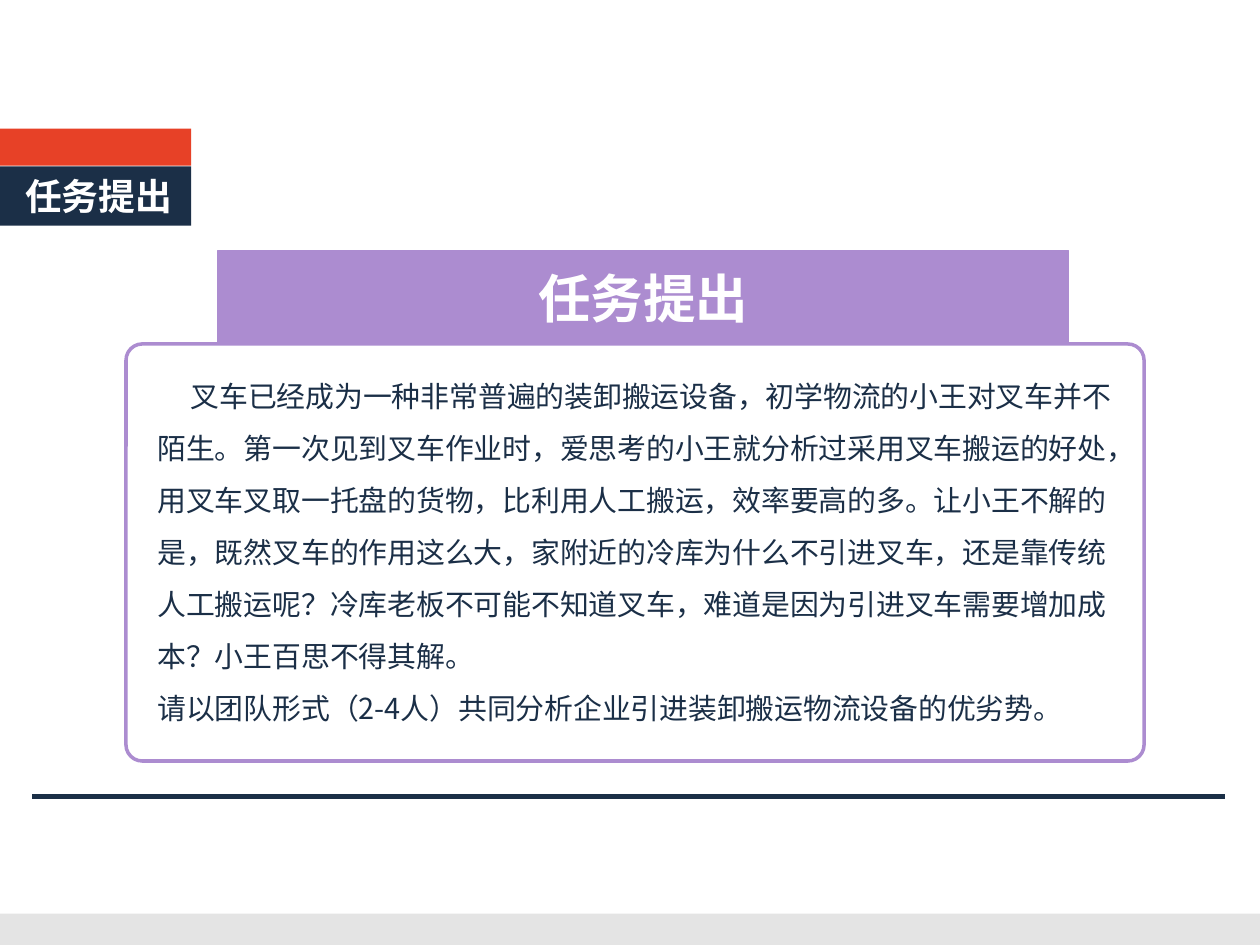
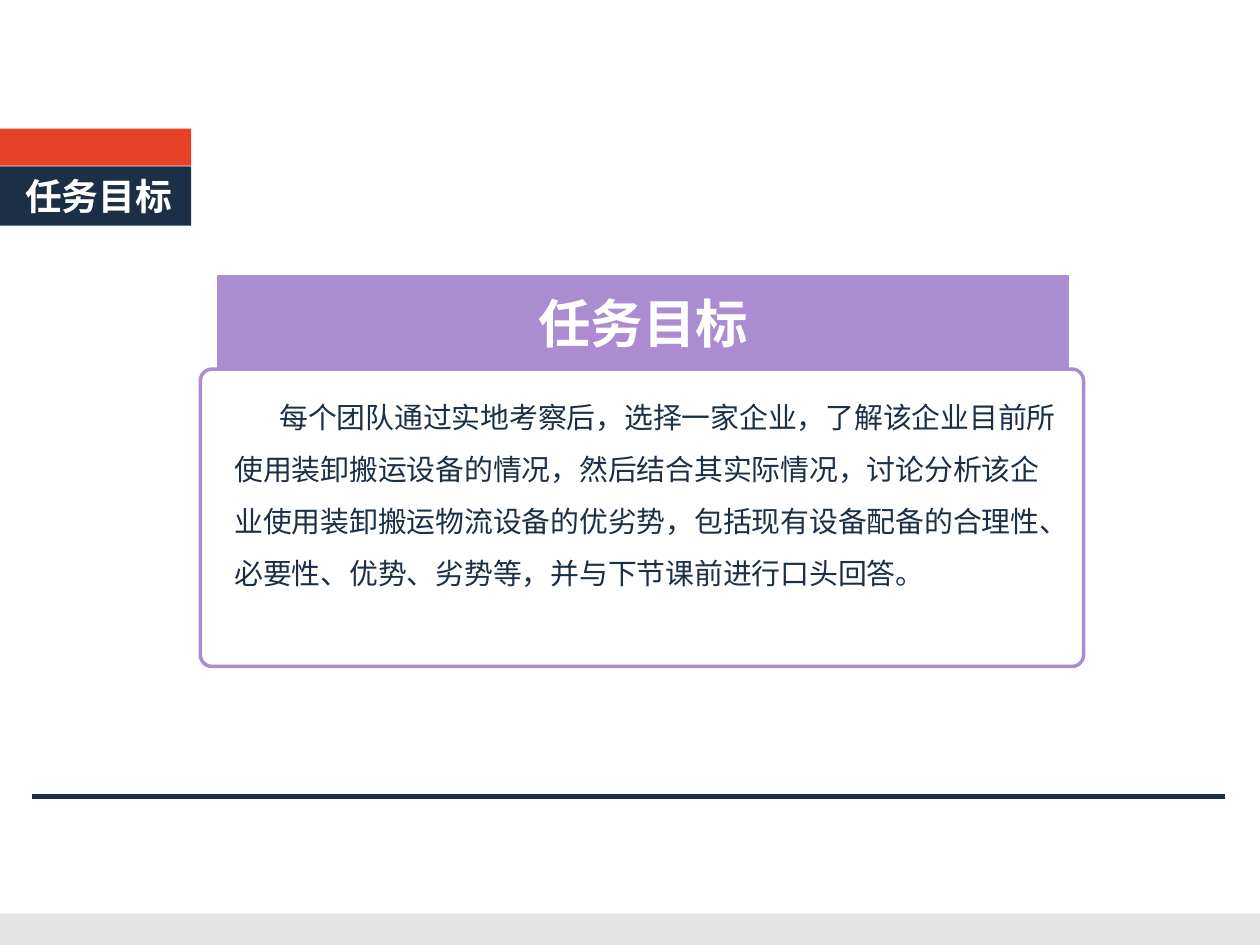
import pptx
import pptx.util
import pptx.dml.color
import pptx.enum.shapes
import pptx.enum.text
import pptx.oxml.ns
from lxml import etree

Pt = pptx.util.Pt
Shape = pptx.enum.shapes.MSO_SHAPE
Align = pptx.enum.text.PP_ALIGN
Anchor = pptx.enum.text.MSO_ANCHOR

SLIDES = [
    {
        "title": "任务提出",
        "panel": (72, 196.56, 581.76, 238.32),
        "body": (82.8, 202.9, 566.64, 225),
        "paragraphs": [
            ("叉车已经成为一种非常普遍的装卸搬运设备，初学物流的小王对叉车并不陌生。"
             "第一次见到叉车作业时，爱思考的小王就分析过采用叉车搬运的好处，"
             "用叉车叉取一托盘的货物，比利用人工搬运，效率要高的多。"
             "让小王不解的是，既然叉车的作用这么大，家附近的冷库为什么不引进叉车，"
             "还是靠传统人工搬运呢？冷库老板不可能不知道叉车，"
             "难道是因为引进叉车需要增加成本？小王百思不得其解。", 19),
            ("请以团队形式（2-4人）共同分析企业引进装卸搬运物流设备的优劣势。", 0),
        ],
    },
    {
        "title": "任务目标",
        "panel": (114.48, 210.96, 504.72, 169.92),
        "body": (126.72, 214.9, 488.16, 127.44),
        "paragraphs": [
            ("每个团队通过实地考察后，选择一家企业，了解该企业目前所使用装卸搬运设备的情况，"
             "然后结合其实际情况，讨论分析该企业使用装卸搬运物流设备的优劣势，"
             "包括现有设备配备的合理性、必要性、优势、劣势等，并与下节课前进行口头回答。", 25.7),
        ],
    },
]

COLORS = {"navy": "1B2F47", "red": "E74127", "purple": "AC8CD0",
          "white": "FFFFFF", "gray": "E4E4E4"}
FONT = "Noto Sans CJK SC"
TEXT_STYLES = {
    "tag": {"size": Pt(21), "bold": True, "color": "white"},
    "banner": {"size": Pt(30), "bold": True, "color": "white"},
    "body": {"size": Pt(16.5), "bold": False, "color": "navy"},
}
PARAGRAPH_FORMATS = {
    "tag": {"alignment": Align.LEFT},
    "banner": {"alignment": Align.CENTER},
    "body": {"alignment": Align.LEFT, "line_spacing": Pt(29.7),
             "space_before": Pt(0), "space_after": Pt(0)},
}
FRAME_FORMAT = {"word_wrap": True, "auto_size": pptx.enum.text.MSO_AUTO_SIZE.NONE,
                "margin_left": Pt(7.2), "margin_right": Pt(7.2),
                "margin_top": Pt(3.6), "margin_bottom": Pt(3.6)}

SLIDE_WIDTH, SLIDE_HEIGHT = 720, 540
FOOTER_HEIGHT = 18
TAG_WIDTH = 109.2
TAG_TITLE_BOX = (7.2, 95.8, 101.52, 32.4)
BANNER_LEFT, BANNER_WIDTH, BANNER_HEIGHT = 124.56, 486, 53.28
RULE_LEFT, RULE_RIGHT, RULE_TOP = 18, 700, 455.04


def rgb(name):
    return pptx.dml.color.RGBColor.from_string(COLORS[name])


def apply_format(target, values):
    for name, value in values.items():
        setattr(target, name, value)


def add_block(slide, kind, box, fill, line=None, line_width=0, rounding=None):
    shape = slide.shapes.add_shape(kind, *map(Pt, box))
    shape.shadow.inherit = False
    shape.fill.solid()
    shape.fill.fore_color.rgb = rgb(fill)
    if rounding is not None:
        shape.adjustments[0] = rounding
    if line:
        shape.line.color.rgb = rgb(line)
        shape.line.width = Pt(line_width)
    else:
        shape.line.fill.background()
    return shape


def write_paragraph(paragraph, text, style):
    apply_format(paragraph, PARAGRAPH_FORMATS[style])
    run = paragraph.add_run()
    run.text = text
    values = dict(TEXT_STYLES[style], name=FONT)
    run.font.color.rgb = rgb(values.pop("color"))
    apply_format(run.font, values)
    east_asian = etree.SubElement(run.font._element, pptx.oxml.ns.qn("a:ea"))
    east_asian.set("typeface", FONT)


def write_text(shape, paragraphs, style, anchor):
    frame = shape.text_frame
    apply_format(frame, dict(FRAME_FORMAT, vertical_anchor=anchor))
    for index, (text, indent) in enumerate(paragraphs):
        paragraph = frame.add_paragraph() if index else frame.paragraphs[0]
        write_paragraph(paragraph, text, style)
        properties = paragraph._p.get_or_add_pPr()
        properties.set("marL", "0")
        properties.set("indent", str(int(Pt(indent))))
        etree.SubElement(properties, pptx.oxml.ns.qn("a:buNone"))


def place_placeholder(slide, placeholder, box):
    apply_format(placeholder, dict(zip(("left", "top", "width", "height"), map(Pt, box))))
    slide.shapes.element.append(placeholder.element)


def add_rule(slide):
    rule = slide.shapes.add_connector(
        pptx.enum.shapes.MSO_CONNECTOR.STRAIGHT,
        Pt(RULE_RIGHT), Pt(RULE_TOP), Pt(RULE_LEFT), Pt(RULE_TOP))
    rule.line.color.rgb = rgb("navy")
    rule.line.width = Pt(3)
    etree.SubElement(rule.element.spPr, pptx.oxml.ns.qn("a:effectLst"))


def add_frame(slide, title):
    add_block(slide, Shape.RECTANGLE,
              (0, SLIDE_HEIGHT - FOOTER_HEIGHT, SLIDE_WIDTH, FOOTER_HEIGHT), "gray")
    for top, height, fill in ((95.04, 33.84, "navy"), (73.6, 21.1, "red")):
        add_block(slide, Shape.ROUNDED_RECTANGLE, (0, top, TAG_WIDTH, height), fill, rounding=0)
    place_placeholder(slide, slide.shapes.title, TAG_TITLE_BOX)
    write_text(slide.shapes.title, [(title, 0)], "tag", Anchor.MIDDLE)
    add_rule(slide)


def add_task_panel(slide, content):
    add_block(slide, Shape.ROUNDED_RECTANGLE, content["panel"], "white", "purple", 2, 0.039)
    body = slide.placeholders[1]
    place_placeholder(slide, body, content["body"])
    write_text(body, content["paragraphs"], "body", Anchor.TOP)
    banner_top = content["panel"][1] - BANNER_HEIGHT
    banner = add_block(slide, Shape.RECTANGLE,
                       (BANNER_LEFT, banner_top, BANNER_WIDTH, BANNER_HEIGHT),
                       "purple", "purple", 0.75)
    write_text(banner, [(content["title"], 0)], "banner", Anchor.MIDDLE)


def main():
    presentation = pptx.Presentation()
    presentation.slide_width = Pt(SLIDE_WIDTH)
    presentation.slide_height = Pt(SLIDE_HEIGHT)
    for content in SLIDES:
        slide = presentation.slides.add_slide(presentation.slide_layouts[1])
        add_frame(slide, content["title"])
        add_task_panel(slide, content)
    presentation.save("out.pptx")


if __name__ == "__main__":
    main()
